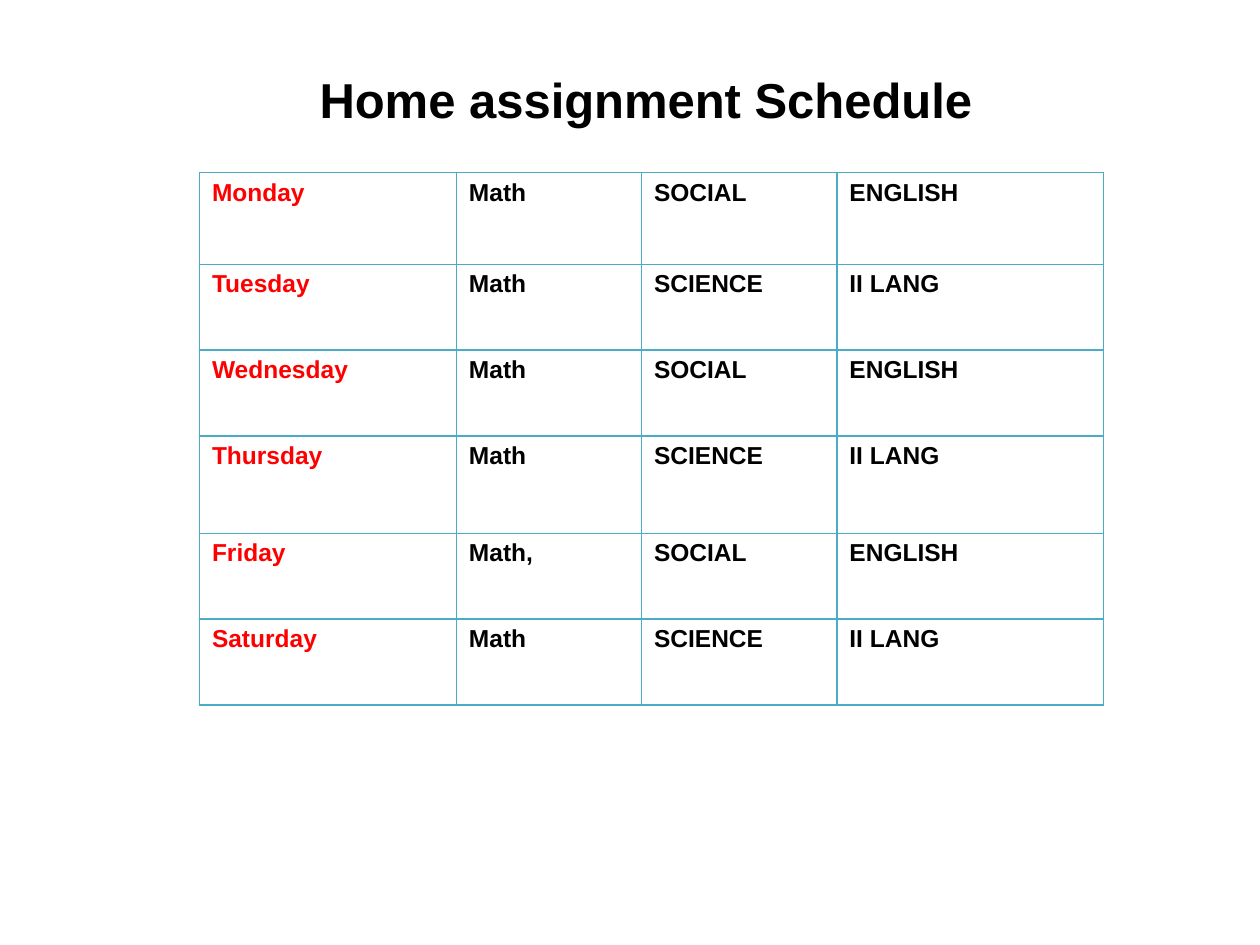
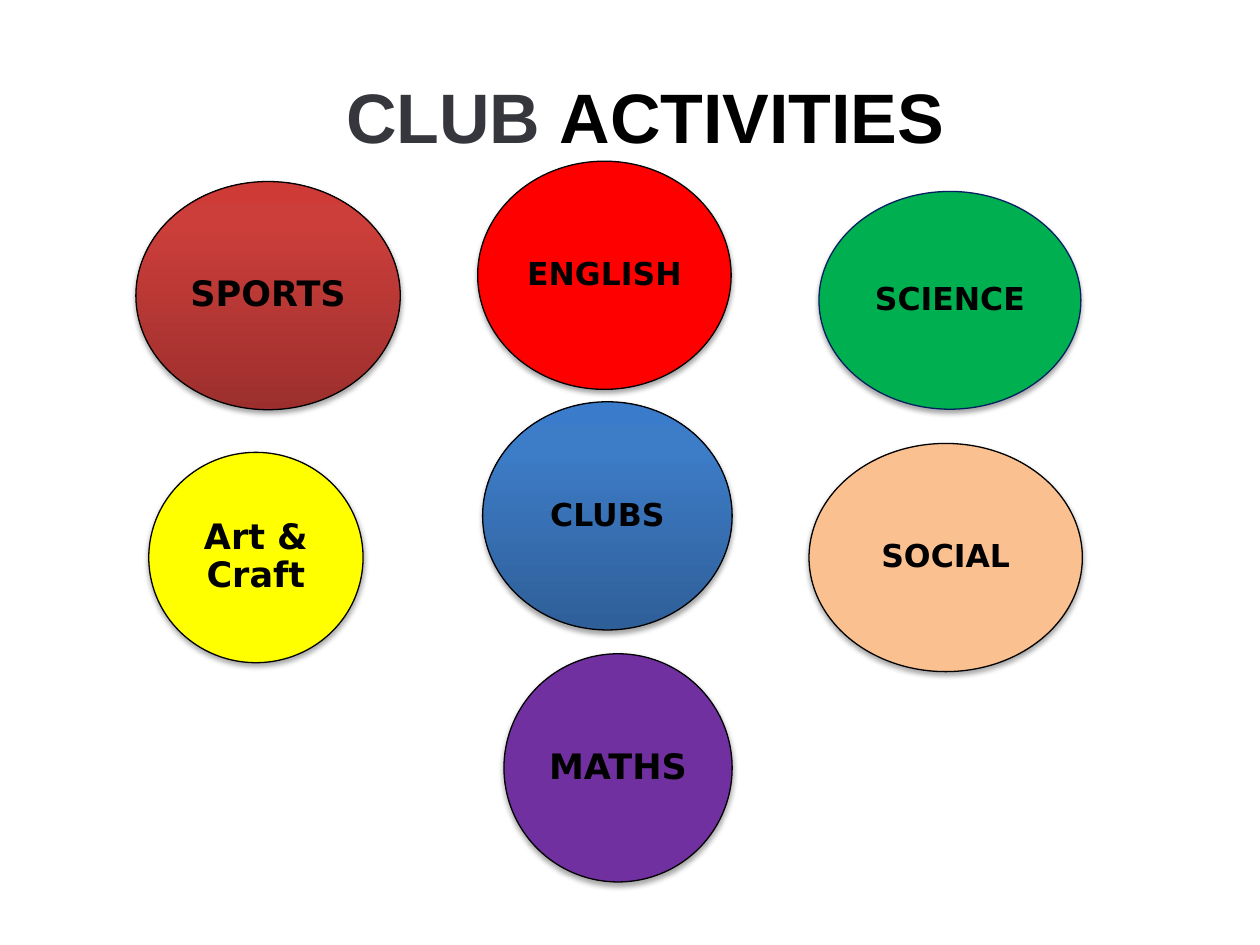
"""Build a home assignment timetable and a club activities slide."""
import copy
import dataclasses

import lxml.etree
import pptx
import pptx.dml.color
import pptx.enum.shapes
import pptx.enum.text
import pptx.oxml.ns
import pptx.util

Cm = pptx.util.Cm
Pt = pptx.util.Pt
Align = pptx.enum.text.PP_ALIGN
tag = pptx.oxml.ns.qn
rgb = pptx.dml.color.RGBColor.from_string


@dataclasses.dataclass(frozen=True)
class Theme:
    sans: str = "Arial"
    round: str = "DejaVu Sans"
    black: str = "000000"
    white: str = "FFFFFF"
    grey: str = "36363D"
    red: str = "FF0000"
    teal: str = "4BACC6"
    navy: str = "002060"
    green: str = "00B050"
    peach: str = "FAC090"
    purple: str = "7030A0"
    yellow: str = "FFFF00"
    blues: tuple = ("2F5F99", "3D7CC7", "3A7CCB")
    rusts: tuple = ("9C2F2D", "CB3E3A", "CE3B37")
    cell: int = 14
    small: int = 18
    large: int = 20
    head: int = 28
    big: int = 40


look = Theme()


def write(para, text, size, color, face=look.sans):
    run = para.add_run()
    run.text = text
    run.font.name = face
    run.font.size = Pt(size)
    run.font.bold = True
    run.font.color.rgb = rgb(color)


def title(slide, place, size, parts, align):
    box = slide.shapes.add_textbox(*map(Cm, place))
    box.text_frame.word_wrap = True
    para = box.text_frame.paragraphs[0]
    para.alignment = align
    for text, color in parts:
        write(para, text, size, color)


deck = pptx.Presentation()
deck.slide_width = Cm(25.4)
deck.slide_height = Cm(19.05)
blank = deck.slide_layouts[6]

slide = deck.slides.add_slide(blank)
title(slide, (3.81, 1.27, 18.42, 1.45), look.head,
      [("Home assignment Schedule", look.black)], Align.CENTER)

days = ["Monday", "Tuesday", "Wednesday", "Thursday", "Friday", "Saturday"]
turns = [("SOCIAL", "ENGLISH"), ("SCIENCE", "II LANG")]
widths = [5.18, 3.73, 3.94, 5.38]
heights = [1.85, 1.73, 1.73, 1.96, 1.73, 1.73]
frame = slide.shapes.add_table(len(days), len(widths), Cm(4.02), Cm(3.48),
                               Cm(sum(widths)), Cm(sum(heights)))
table = frame.table
table.first_row = False
table.horz_banding = False
for col, width in zip(table.columns, widths):
    col.width = Cm(width)
for row, height in zip(table.rows, heights):
    row.height = Cm(height)

for r, day in enumerate(days):
    math = "Math," if day == "Friday" else "Math"
    for c, text in enumerate([day, math, *turns[r % 2]]):
        cell = table.cell(r, c)
        para = cell.text_frame.paragraphs[0]
        write(para, text, look.cell, look.black if c else look.red)
        props = cell._tc.get_or_add_tcPr()
        for side in ("a:lnL", "a:lnR", "a:lnT", "a:lnB"):
            edge = lxml.etree.SubElement(props, tag(side), w=str(Pt(1)))
            fill = lxml.etree.SubElement(edge, tag("a:solidFill"))
            lxml.etree.SubElement(fill, tag("a:srgbClr"), val=look.teal)
        cell.fill.solid()
        cell.fill.fore_color.rgb = rgb(look.white)

slide = deck.slides.add_slide(blank)
clubs = [
    ("CLUBS", (9.73, 8.1, 5.03, 4.6), look.blues, look.small),
    ("ENGLISH", (9.63, 3.25, 5.11, 4.6), look.red, look.small),
    ("SCIENCE", (16.51, 3.86, 5.28, 4.39), look.green, look.small),
    ("SOCIAL", (16.31, 8.94, 5.51, 4.6), look.peach, look.small),
    ("MATHS", (10.16, 13.18, 4.6, 4.6), look.purple, look.large),
    ("Art & Craft", (3, 9.12, 4.32, 4.24), look.yellow, look.large),
    ("SPORTS", (2.74, 3.66, 5.33, 4.6), look.rusts, look.large),
]
for name, place, paint, size in clubs:
    disc = slide.shapes.add_shape(pptx.enum.shapes.MSO_SHAPE.OVAL, *map(Cm, place))
    if isinstance(paint, tuple):
        disc.fill.gradient()
        disc.fill.gradient_angle = 90
        stops = disc.element.spPr.find(".//" + tag("a:gsLst"))
        stops.append(copy.deepcopy(stops[-1]))
        for stop, color, spot in zip(disc.fill.gradient_stops, paint, (0, 0.8, 1)):
            stop.color.rgb = rgb(color)
            stop.position = spot
    else:
        disc.fill.solid()
        disc.fill.fore_color.rgb = rgb(paint)
    disc.line.width = Pt(0.75)
    disc.line.color.rgb = rgb(look.navy if name == "SCIENCE" else look.black)

    disc.shadow.inherit = False
    list_ = disc.element.spPr.find(tag("a:effectLst"))
    shade = lxml.etree.SubElement(list_, tag("a:outerShdw"), blurRad=str(Pt(3.1)),
                                  dist=str(Pt(1.8)), dir="5400000", rotWithShape="0")
    tint = lxml.etree.SubElement(shade, tag("a:srgbClr"), val=look.black)
    lxml.etree.SubElement(tint, tag("a:alpha"), val="35000")

    body = disc.text_frame
    body.word_wrap = True
    body.vertical_anchor = pptx.enum.text.MSO_ANCHOR.MIDDLE
    body.margin_left = body.margin_right = Cm(0.03)
    body.margin_top = body.margin_bottom = Cm(0.03)
    para = body.paragraphs[0]
    para.alignment = Align.CENTER
    para.line_spacing = 0.9
    write(para, name, size, look.black, look.round)

title(slide, (6.73, 1.35, 13.11, 1.91), look.big,
      [("CLUB ", look.grey), ("ACTIVITIES", look.black)], Align.LEFT)

deck.save("out.pptx")
